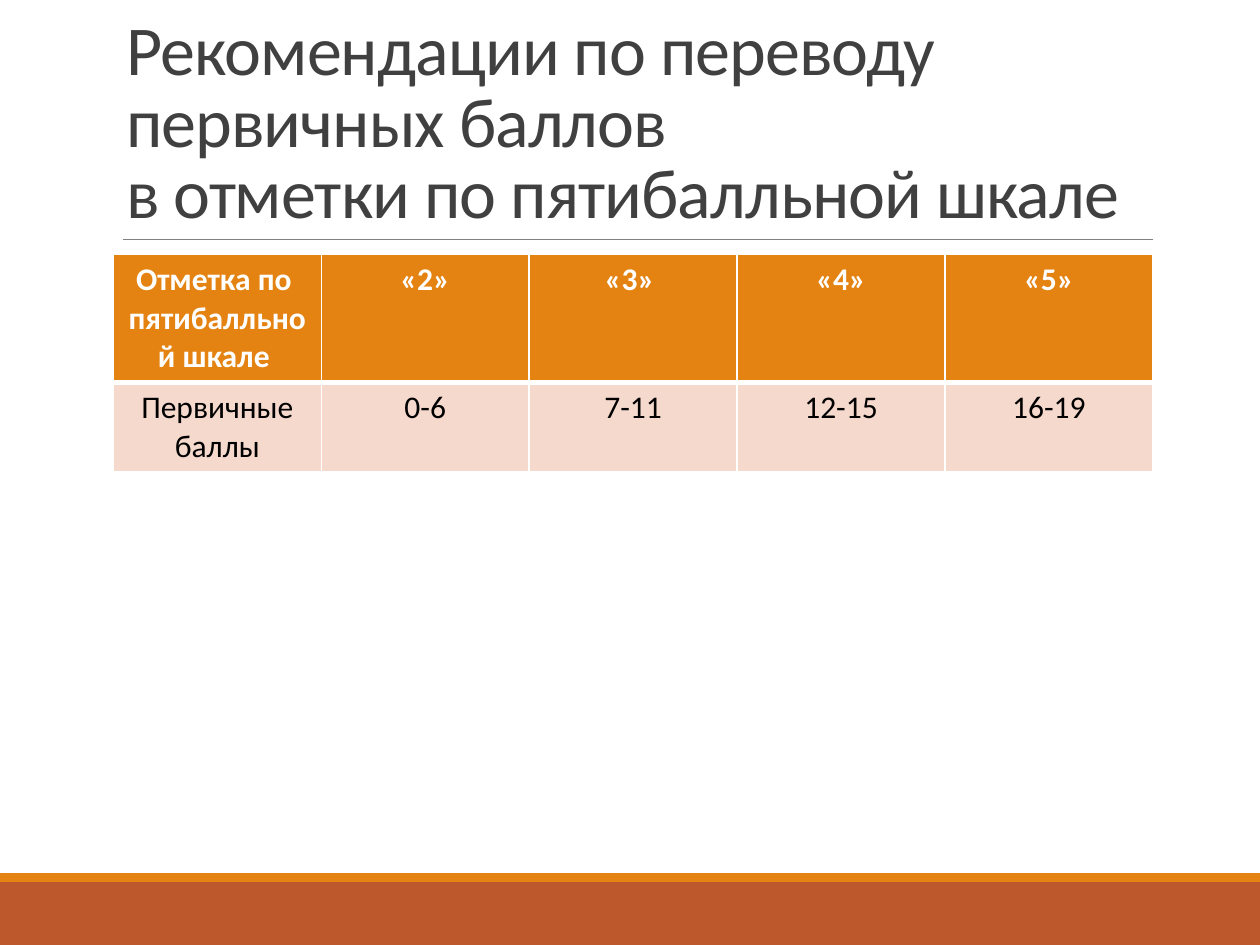
from lxml.etree import SubElement
from pptx import Presentation
from pptx.dml.color import RGBColor
from pptx.enum.shapes import MSO_CONNECTOR, MSO_SHAPE
from pptx.enum.text import MSO_ANCHOR, MSO_AUTO_SIZE, PP_ALIGN
from pptx.oxml.ns import qn
from pptx.util import Inches, Pt

COLORS = {"rust": "BD582C", "orange": "E48312", "rule": "808080", "title": "404040",
          "white": "FFFFFF", "black": "000000", "pale": "F5D9CC"}


def rgb(name):
    return RGBColor.from_string(COLORS[name])


class SlideBuilder:
    font = "Calibri"

    def __init__(self, s):
        self.s = s

    def run(self, p, text, size, color, bold=False):
        r = p.add_run()
        r.text = text
        f = r.font
        f.name, f.size, f.bold = self.font, Pt(size), bold
        f.color.rgb = rgb(color)
        return r

    def bar(self, y, h, color):
        sp = self.s.shapes.add_shape(MSO_SHAPE.RECTANGLE, 0, Inches(y), Inches(10), Inches(h))
        sp.shadow.inherit = False
        sp.fill.solid()
        sp.fill.fore_color.rgb = rgb(color)
        sp.line.fill.background()

    def rule(self, x1, x2, y):
        c = self.s.shapes.add_connector(MSO_CONNECTOR.STRAIGHT, Inches(x1), Inches(y),
                                        Inches(x2), Inches(y))
        c.line.color.rgb = rgb("rule")
        c.line.width = Pt(0.5)
        SubElement(c._element.spPr, qn("a:effectLst"))

    def title(self, x, y, w, h, lines):
        sp = self.s.shapes.title
        sp.left, sp.top, sp.width, sp.height = map(Inches, (x, y, w, h))
        tf = sp.text_frame
        tf.word_wrap = True
        tf.auto_size = MSO_AUTO_SIZE.NONE
        tf.vertical_anchor = MSO_ANCHOR.BOTTOM
        p = tf.paragraphs[0]
        p.alignment = PP_ALIGN.LEFT
        p.line_spacing = 0.85
        for i, line in enumerate(lines):
            if i:
                p.add_line_break()
            r = self.run(p, line, 40, "title")
            r.font._element.set("spc", "-50")

    def borders(self, cell, widths):
        tcPr = cell._tc.get_or_add_tcPr()
        for i, (side, width) in enumerate(widths.items()):
            ln = tcPr.makeelement(qn(f"a:ln{side}"), {"w": str(Pt(width))})
            fill = SubElement(ln, qn("a:solidFill"))
            SubElement(fill, qn("a:srgbClr"), val=COLORS["white"])
            tcPr.insert(i, ln)  # borders come before the cell fill

    def table(self, x, y, w, heights, rows):
        n = len(rows[0])
        table = self.s.shapes.add_table(len(rows), n, Inches(x), Inches(y), Inches(w),
                                        Inches(sum(heights))).table
        for col in table.columns:
            col.width = Inches(w / n)
        for i, texts in enumerate(rows):
            table.rows[i].height = Inches(heights[i])
            header = i == 0
            for j, text in enumerate(texts):
                cell = table.cell(i, j)
                cell.fill.solid()
                cell.fill.fore_color.rgb = rgb("orange" if header else "pale")
                self.borders(cell, {"L": 1, "R": 1, "T": 1 if header else 3,
                                    "B": 3 if header else 1})
                tf = cell.text_frame
                for k, line in enumerate(text.split("\n")):
                    p = tf.add_paragraph() if k else tf.paragraphs[0]
                    p.alignment = PP_ALIGN.CENTER
                    self.run(p, line, 18, "white" if header else "black", header)


def main():
    prs = Presentation()
    prs.slide_width, prs.slide_height = Inches(10), Inches(7.5)
    b = SlideBuilder(prs.slides.add_slide(prs.slide_layouts[5]))

    # Footer bands and the line under the title
    b.bar(7, 0.5, "rust")
    b.bar(6.93, 0.07, "orange")
    b.rule(0.98, 9.15, 1.9)

    # Title
    b.title(0.9, 0.31, 8.25, 1.59, ["Рекомендации по переводу первичных баллов ",
                                    "в отметки по пятибалльной шкале"])

    # Score conversion table
    b.table(0.9, 2.02, 8.25, [1.01, 0.69], [
        ["Отметка по \nпятибалльной шкале ", "«2»", "«3» ", "«4»", "«5»"],
        ["Первичные баллы", "0-6", "7-11", "12-15", "16-19"],
    ])

    prs.save("out.pptx")


if __name__ == "__main__":
    main()
